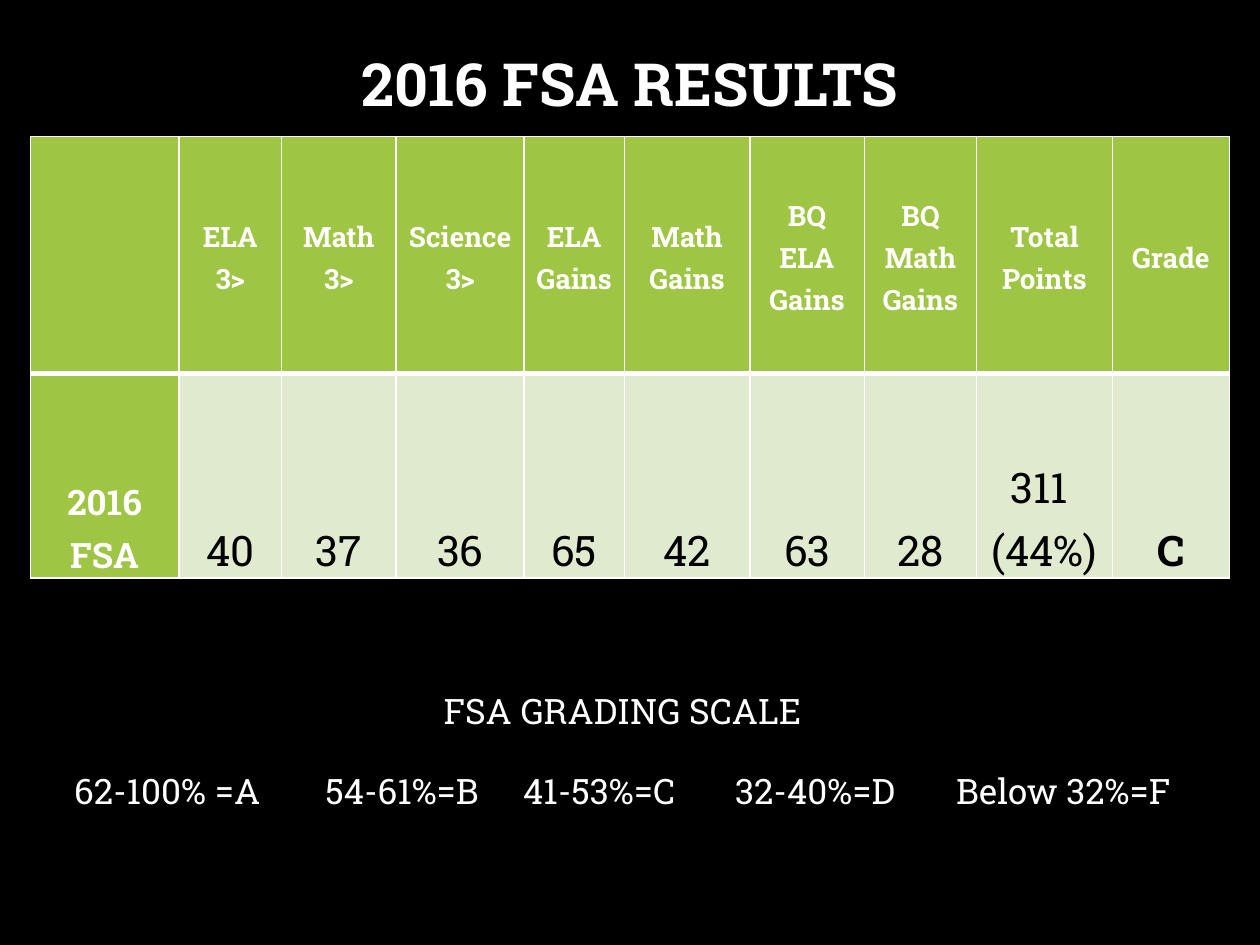
from lxml.etree import SubElement
from pptx import Presentation
from pptx.dml.color import RGBColor
from pptx.enum.text import MSO_ANCHOR, PP_ALIGN
from pptx.oxml.ns import qn
from pptx.util import Pt

# Content
TITLE = "2016 FSA RESULTS"
RESULTS = [
    # heading, result, column width
    ("", "2016 FSA", 85),
    ("ELA\n3>", "40", 58.6),
    ("Math\n3>", "37", 65.5),
    ("Science\n3>", "36", 73.2),
    ("ELA Gains", "65", 57.2),
    ("Math Gains", "42", 71.8),
    ("BQ ELA Gains", "63", 65.4),
    ("BQ Math Gains", "28", 64.2),
    ("Total Points", "311 \n(44%)", 77.6),
    ("Grade", "C", 67),
]
ROW_HEIGHTS = [135.6, 116.8]
SCALE_TITLE = "FSA GRADING SCALE"
SCALE = [
    # grade band, tab position
    ("62-100% =A", 22.3),
    ("54-61%=B", 165.8),
    ("41-53%=C", 278.8),
    ("32-40%=D", 400),
    ("Below 32%=F", 526.3),
]

# Style
FONT = "Roboto Slab"
BLACK, WHITE, GREEN, PALE = "000000", "FFFFFF", "9EC544", "DFEACF"


def color(hex_code):
    return RGBColor.from_string(hex_code)


def format_text(frame, size, text_color, bold=False, spacing=None):
    for paragraph in frame.paragraphs:
        paragraph.alignment = PP_ALIGN.CENTER
        paragraph.line_spacing = spacing
        font = paragraph.font
        font.name, font.size, font.bold = FONT, Pt(size), bold
        font.color.rgb = color(text_color)


def add_border(cell, side, width):
    line = SubElement(cell._tc.get_or_add_tcPr(), qn(f"a:ln{side}"), w=str(Pt(width)))
    fill = SubElement(line, qn("a:solidFill"))
    SubElement(fill, qn("a:srgbClr"), val=WHITE)


def fill_cell(cell, text, row, column, last_column):
    is_label = row == 0 or column == 0
    cell.text = text
    cell.margin_left = cell.margin_right = Pt(4.3)
    cell.margin_top = cell.margin_bottom = Pt(0)
    cell.vertical_anchor = MSO_ANCHOR.BOTTOM if row else MSO_ANCHOR.MIDDLE
    size = 16 if row == 0 else 20 if column == 0 else 24
    format_text(cell.text_frame, size, WHITE if is_label else BLACK,
                bold=is_label or column == last_column, spacing=1.15)
    # A thick rule parts the headings from the results
    widths = {"L": 1, "R": 1, "T": 3 if row else 1, "B": 1 if row else 3}
    for side, width in widths.items():
        add_border(cell, side, width)
    cell.fill.solid()
    cell.fill.fore_color.rgb = color(GREEN if is_label else PALE)


presentation = Presentation()
presentation.slide_width, presentation.slide_height = Pt(720), Pt(540)
slide = presentation.slides.add_slide(presentation.slide_layouts[5])
slide.background.fill.solid()
slide.background.fill.fore_color.rgb = color(BLACK)

# Title
title = slide.shapes.title
title.left, title.top, title.width, title.height = Pt(54), Pt(21.6), Pt(612), Pt(56)
title.text_frame.text = TITLE
title.text_frame.vertical_anchor = MSO_ANCHOR.MIDDLE
format_text(title.text_frame, 34, WHITE, bold=True, spacing=0.9)

# Results table
table_width = sum(width for _, _, width in RESULTS)
table = slide.shapes.add_table(
    len(ROW_HEIGHTS), len(RESULTS), Pt(17.3), Pt(78), Pt(table_width), Pt(sum(ROW_HEIGHTS))
).table
for row, height in enumerate(ROW_HEIGHTS):
    table.rows[row].height = Pt(height)
for column, (*texts, width) in enumerate(RESULTS):
    table.columns[column].width = Pt(width)
    for row, text in enumerate(texts):
        fill_cell(table.cell(row, column), text, row, column, len(RESULTS) - 1)

# Grading scale, with one tab stop per band
scale_box = slide.shapes.add_textbox(Pt(13), Pt(390.2), Pt(685.4), Pt(80))
frame = scale_box.text_frame
frame.word_wrap = True
frame.text = SCALE_TITLE + "\n" + "".join("\t" + band for band, _ in SCALE)
format_text(frame, 20, WHITE)
bands = frame.paragraphs[1]
bands.alignment = PP_ALIGN.LEFT
bands.space_before = Pt(22)
properties = bands._p.get_or_add_pPr()
tab_list = properties.makeelement(qn("a:tabLst"))
properties.find(qn("a:defRPr")).addprevious(tab_list)
for _, position in SCALE:
    SubElement(tab_list, qn("a:tab"), pos=str(Pt(position)), algn="l")

presentation.save("out.pptx")
